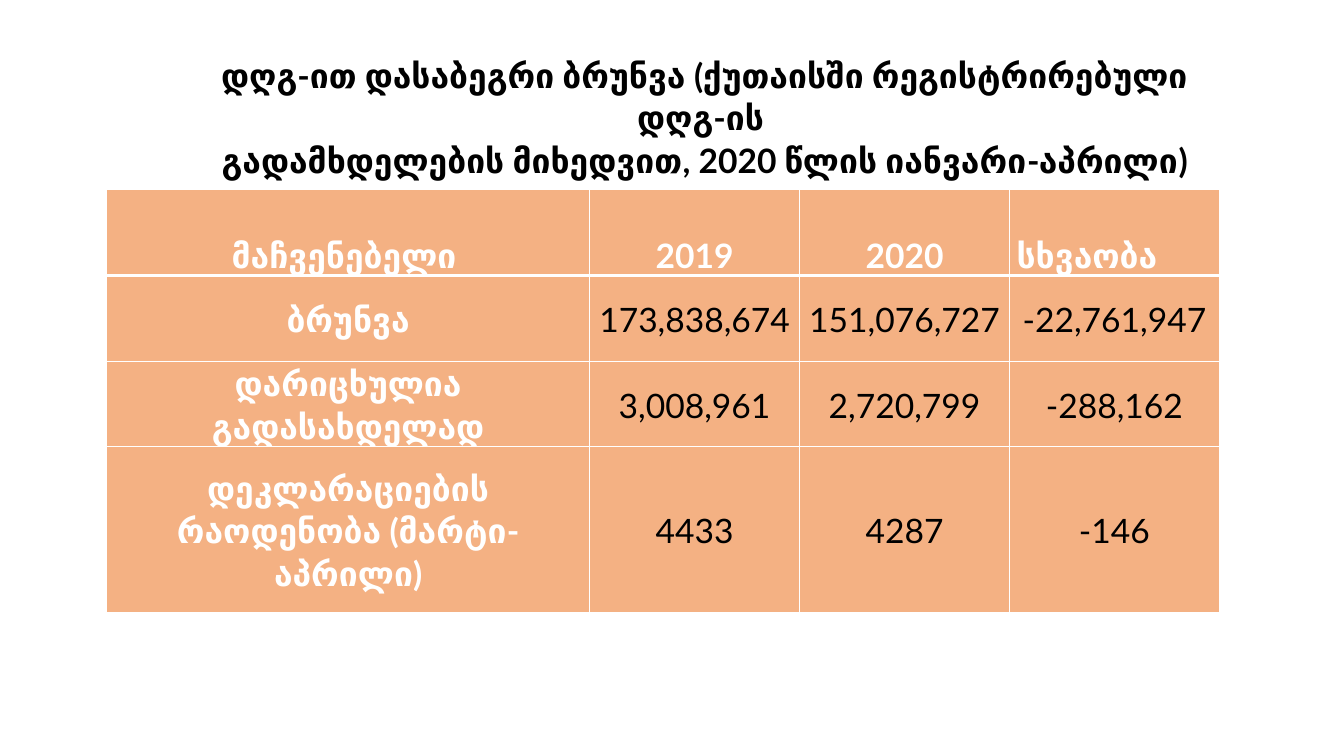
from dataclasses import dataclass

from lxml.etree import SubElement
from pptx import Presentation
from pptx.dml.color import RGBColor as RGB
from pptx.enum.text import MSO_ANCHOR as Anchor, MSO_AUTO_SIZE as Fit, PP_ALIGN as Align
from pptx.oxml.ns import qn
from pptx.util import Cm, Pt


@dataclass(frozen=True)
class Theme:
    font: str = "Lato"
    size: float = 24
    lead: float = 1.06
    ink: str = "000000"
    white: str = "FFFFFF"
    peach: str = "F4B183"
    thin: float = 1
    thick: float = 3


THEME = Theme()

TITLE = [
    "დღგ-ით დასაბეგრი ბრუნვა (ქუთაისში რეგისტრირებული დღგ-ის ",
    "გადამხდელების მიხედვით, 2020 წლის იანვარი-აპრილი)",
]
ROWS = [
    ["მაჩვენებელი ", "2019", "2020", "სხვაობა"],
    ["ბრუნვა", "173,838,674", "151,076,727", "-22,761,947"],
    ["დარიცხულია გადასახდელად", "3,008,961", "2,720,799", "-288,162"],
    ["დეკლარაციების რაოდენობა (მარტი-აპრილი)", "4433", "4287", "-146"],
]
HEIGHTS = [2.16, 2.16, 2.03, 4.19]
LABEL_SHARE = 0.434


def style(para, color, bold, align=Align.CENTER):
    para.alignment = align
    para.line_spacing = THEME.lead
    for run in para.runs:
        font = run.font
        font.name, font.size, font.bold = THEME.font, Pt(THEME.size), bold
        font.color.rgb = RGB.from_string(color)


def add_title(slide, left, top, width, height):
    box = slide.shapes.add_textbox(Cm(left), Cm(top), Cm(width), Cm(height))
    frame = box.text_frame
    frame.word_wrap = True
    frame.auto_size = Fit.SHAPE_TO_FIT_TEXT
    frame.text = "\n".join(TITLE)
    for para in frame.paragraphs:
        style(para, THEME.ink, True)
    frame.paragraphs[-1].space_after = Pt(8)


def set_edges(cell, widths):
    """Draw white borders; widths maps the sides L, R, T, B to points."""
    props = cell._tc.get_or_add_tcPr()
    for spot, (side, width) in enumerate(widths.items()):
        line = SubElement(props, qn(f"a:ln{side}"), w=str(Pt(width)))
        fill = SubElement(line, qn("a:solidFill"))
        SubElement(fill, qn("a:srgbClr"), val=THEME.white)
        props.insert(spot, line)


def fill_cell(cell, text, row, col):
    head = row == 0
    label = head or col == 0
    cell.text = text
    cell.margin_left = cell.margin_right = Cm(0.18)
    cell.margin_top = cell.margin_bottom = 0
    cell.vertical_anchor = Anchor.BOTTOM if head else Anchor.MIDDLE
    cell.fill.solid()
    cell.fill.fore_color.rgb = RGB.from_string(THEME.peach)
    align = Align.LEFT if head and col == len(ROWS[0]) - 1 else Align.CENTER
    style(cell.text_frame.paragraphs[0], THEME.white if label else THEME.ink, label, align)
    set_edges(cell, {
        "L": THEME.thin,
        "R": THEME.thin,
        "T": THEME.thick if row == 1 else THEME.thin,
        "B": THEME.thick if head else THEME.thin,
    })


def add_grid(slide, left, top, width):
    count = len(ROWS[0])
    frame = slide.shapes.add_table(
        len(ROWS), count, Cm(left), Cm(top), Cm(width), Cm(sum(HEIGHTS)))
    table = frame.table
    table.horz_banding = False
    first = width * LABEL_SHARE
    rest = (width - first) / (count - 1)
    for col, column in enumerate(table.columns):
        column.width = Cm(rest if col else first)
    for row, texts in enumerate(ROWS):
        table.rows[row].height = Cm(HEIGHTS[row])
        for col, text in enumerate(texts):
            fill_cell(table.cell(row, col), text, row, col)


def main():
    deck = Presentation()
    deck.slide_width, deck.slide_height = Cm(33.87), Cm(19.05)
    slide = deck.slides.add_slide(deck.slide_layouts[6])
    add_title(slide, 4.78, 1.19, 25.96, 2.44)
    add_grid(slide, 2.69, 4.78, 28.04)
    deck.save("out.pptx")


if __name__ == "__main__":
    main()
